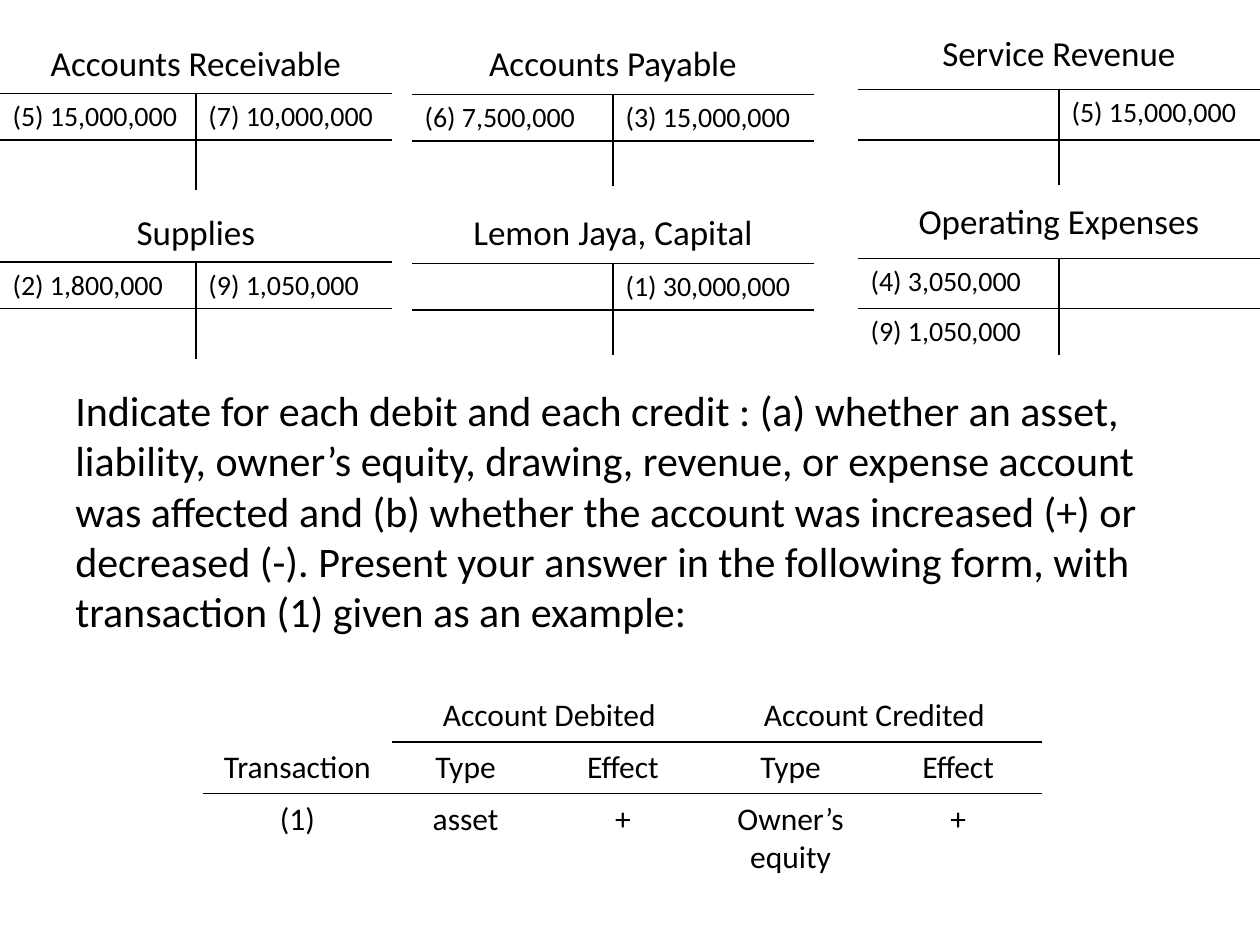
from lxml.etree import SubElement
from pptx import Presentation
from pptx.dml.color import RGBColor
from pptx.enum.text import MSO_ANCHOR, PP_ALIGN
from pptx.oxml import parse_xml
from pptx.oxml.ns import nsdecls, qn
from pptx.util import Inches, Pt

BLACK = "000000"
NO_STYLE = "{2D5ABB26-0587-4C30-8999-92F81FD0307C}"


def colour(value):
    return RGBColor.from_string(value)


class SlideBuilder:
    font = "Calibri"
    ink = BLACK

    def __init__(self, slide):
        self.slide = slide

    def format_text(self, frame, size, align):
        for para in frame.paragraphs:
            para.alignment = align
            for span in para.runs:
                span.font.name = self.font
                span.font.size = Pt(size)
                span.font.color.rgb = colour(self.ink)

    def text(self, left, top, width, height, words, size):
        box = self.slide.shapes.add_textbox(
            Inches(left), Inches(top), Inches(width), Inches(height))
        frame = box.text_frame
        frame.word_wrap = True
        frame.text = words
        self.format_text(frame, size, PP_ALIGN.LEFT)

    def table(self, left, top, columns, rows):
        frame = self.slide.shapes.add_table(
            len(rows), len(columns), Inches(left), Inches(top),
            Inches(sum(columns)), Inches(sum(rows)))
        table = frame.table
        table.first_row = table.horz_banding = False
        table._tbl.tblPr.find(qn("a:tableStyleId")).text = NO_STYLE
        for column, width in zip(table.columns, columns):
            column.width = Inches(width)
        for row, height in zip(table.rows, rows):
            row.height = Inches(height)
        return table

    def cell(self, cell, words, size, align, sides=""):
        cell.fill.background()
        cell.vertical_anchor = MSO_ANCHOR.TOP
        if words:
            cell.text_frame.text = words
            self.format_text(cell.text_frame, size, align)
        else:
            # Keep blank cells from stretching their row
            cell.margin_top = cell.margin_bottom = 0
        properties = cell._tc.get_or_add_tcPr()
        drawn = [side for side in "LRTB" if side in sides]
        for position, side in enumerate(drawn):
            line = parse_xml(f'<a:ln{side} {nsdecls("a")} w="{Pt(1)}"/>')
            fill = SubElement(line, qn("a:solidFill"))
            SubElement(fill, qn("a:srgbClr"), val=self.ink)
            properties.insert(position, line)

    def t_account(self, left, top, width, rows, name, entries):
        table = self.table(left, top, [width / 2] * 2, rows)
        table.cell(0, 0).merge(table.cell(0, 1))
        for column in range(2):
            title = name if column == 0 else ""
            self.cell(table.cell(0, column), title, 20, PP_ALIGN.CENTER, "B")
            middle = "RL"[column]
            for row, pair in enumerate(entries, start=1):
                sides = middle + ("TB" if row == 1 else "T")
                self.cell(table.cell(row, column), pair[column], 16,
                          PP_ALIGN.LEFT, sides)

    def answer_form(self, left, top, columns, rows, content):
        table = self.table(left, top, columns, rows)
        for first in (1, 3):
            table.cell(0, first).merge(table.cell(0, first + 1))
        for row, line in enumerate(content):
            for column, words in enumerate(line):
                ruled = row == 1 or (row == 0 and column > 0)
                self.cell(table.cell(row, column), words, 18,
                          PP_ALIGN.CENTER, "B" if ruled else "")


def main():
    deck = Presentation()
    deck.slide_width, deck.slide_height = Inches(10), Inches(7.5)
    page = SlideBuilder(deck.slides.add_slide(deck.slide_layouts[6]))

    # Instruction
    page.text(
        0.5, 3, 9, 2.15,
        "Indicate for each debit and each credit : (a) whether an asset, "
        "liability, owner’s equity, drawing, revenue, or expense account was "
        "affected and (b) whether the account was increased (+) or decreased "
        "(-). Present your answer in the following form, with transaction (1) "
        "given as an example:", 24)

    # T accounts: left, first top, width, row heights, accounts downwards
    blank = ("", "")
    account_columns = [
        (0, 0.29, 3.11, (0.45, 0.37, 0.4), [
            ("Accounts Receivable",
             [("(5) 15,000,000", "(7) 10,000,000"), blank]),
            ("Supplies", [("(2) 1,800,000", "(9) 1,050,000"), blank])]),
        (3.27, 0.29, 3.19, (0.46, 0.37, 0.36), [
            ("Accounts Payable",
             [("(6) 7,500,000", "(3) 15,000,000"), blank]),
            ("Lemon Jaya, Capital", [("", "(1) 30,000,000"), blank])]),
        (6.81, 0.21, 3.19, (0.5, 0.4, 0.36), [
            ("Service Revenue", [("", "(5) 15,000,000"), blank]),
            ("Operating Expenses",
             [("(4) 3,050,000", ""), ("(9) 1,050,000", "")])]),
    ]
    account_step = 1.34
    for left, top, width, rows, accounts in account_columns:
        for index, (name, entries) in enumerate(accounts):
            page.t_account(left, top + index * account_step, width, rows,
                           name, entries)

    # Answer form
    page.answer_form(
        1.61, 5.48, (1.5, 1.17, 1.33, 1.33, 1.33), (0.41, 0.41, 0.69),
        [("", "Account Debited", "", "Account Credited", ""),
         ("Transaction", "Type", "Effect", "Type", "Effect"),
         ("(1)", "asset", "+", "Owner’s equity", "+")])

    deck.save("out.pptx")


if __name__ == "__main__":
    main()
